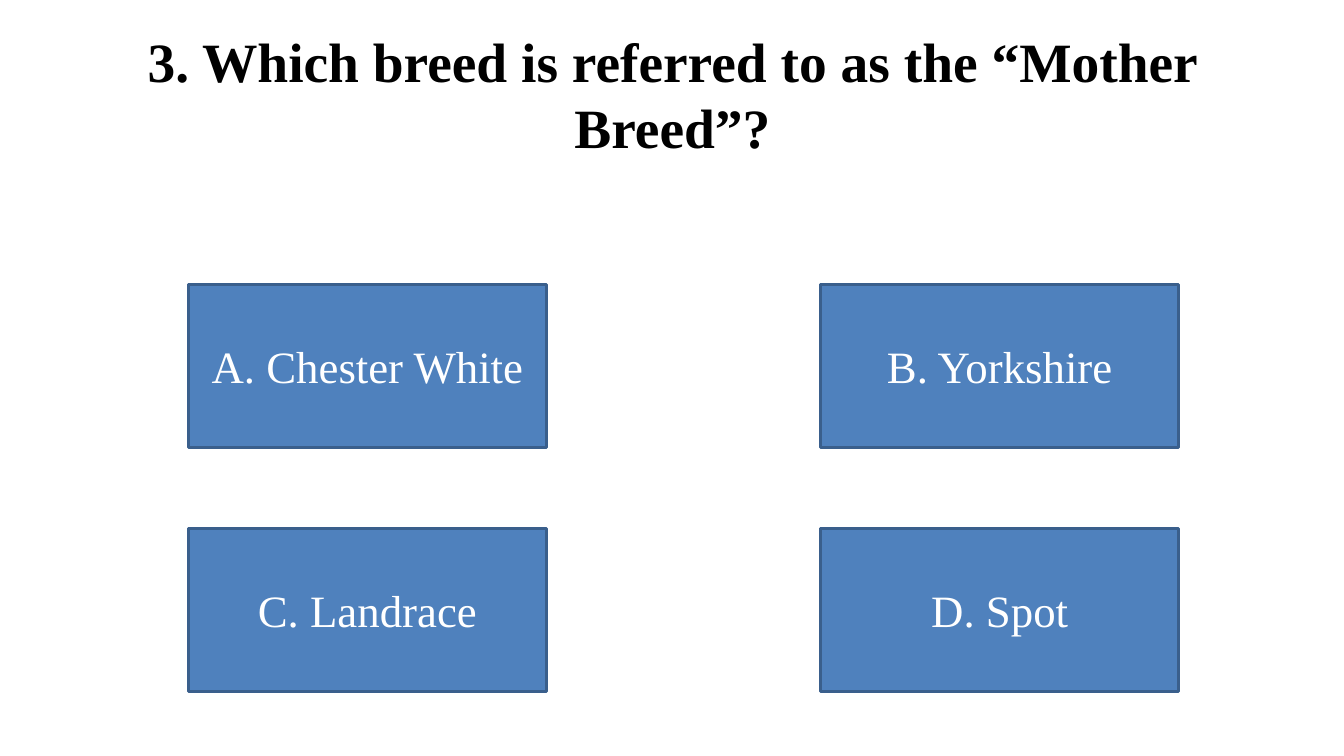
"""Build a quiz slide with a question above a two-by-two grid of answers."""
from pptx import Presentation
from pptx.dml.color import RGBColor
from pptx.enum.shapes import MSO_SHAPE
from pptx.enum.text import MSO_ANCHOR, PP_ALIGN
from pptx.util import Inches, Pt

RECTANGLE = MSO_SHAPE.RECTANGLE
MIDDLE = MSO_ANCHOR.MIDDLE
CENTER = PP_ALIGN.CENTER
BLANK_LAYOUT = 6

LEFT, TOP = 1.87, 2.82
COLUMN_STEP, ROW_STEP = 6.27, 2.42
ANSWER_WIDTH, ANSWER_HEIGHT = 3.55, 1.62
ANSWERS = [
    ["A. Chester White", "B. Yorkshire"],
    ["C. Landrace", "D. Spot"],
]


def paint(color_format, color):
    color_format.rgb = RGBColor.from_string(color)


def write(shape, text, *, size, color, bold=False):
    frame = shape.text_frame
    frame.word_wrap = True
    frame.vertical_anchor = MIDDLE
    paragraph = frame.paragraphs[0]
    paragraph.alignment = CENTER
    run = paragraph.add_run()
    run.text = text
    run.font.name = "Times New Roman"
    run.font.size = Pt(size)
    run.font.bold = bold
    paint(run.font.color, color)


presentation = Presentation()
presentation.slide_width = Inches(13.33)
presentation.slide_height = Inches(7.5)
slide = presentation.slides.add_slide(presentation.slide_layouts[BLANK_LAYOUT])

question = slide.shapes.add_textbox(Inches(0.67), Inches(0.3), Inches(12), Inches(1.25))
write(question, "3. Which breed is referred to as the “Mother Breed”?",
      size=39.6, color="000000", bold=True)

for row, answers in enumerate(ANSWERS):
    for column, answer in enumerate(answers):
        box = slide.shapes.add_shape(
            RECTANGLE,
            Inches(LEFT + column * COLUMN_STEP), Inches(TOP + row * ROW_STEP),
            Inches(ANSWER_WIDTH), Inches(ANSWER_HEIGHT))
        box.shadow.inherit = False
        box.fill.solid()
        paint(box.fill.fore_color, "4F81BD")
        paint(box.line.color, "3A5F8C")
        box.line.width = Pt(2)
        write(box, answer, size=32, color="FFFFFF")

presentation.save("out.pptx")
